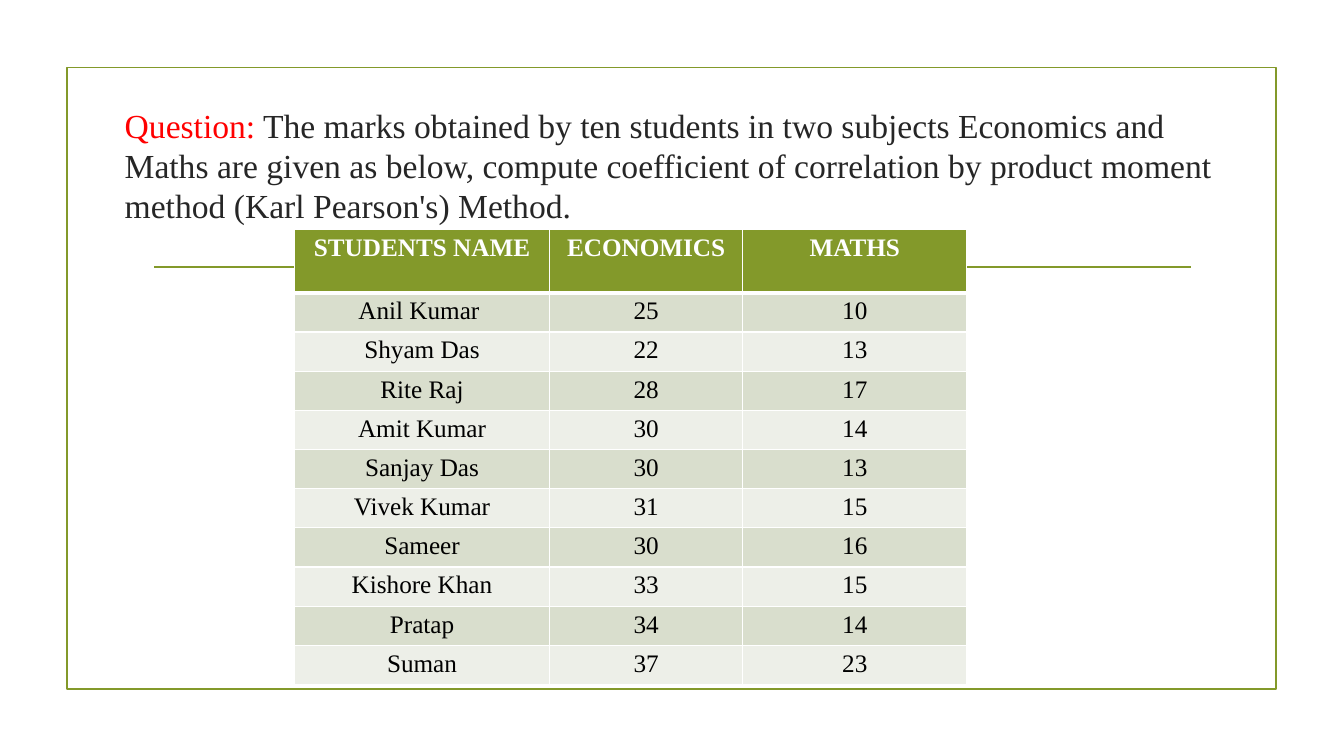
from pptx import Presentation
from pptx.dml.color import RGBColor
from pptx.enum.shapes import MSO_CONNECTOR, MSO_SHAPE
from pptx.enum.text import MSO_ANCHOR, PP_ALIGN
from pptx.oxml import parse_xml
from pptx.oxml.ns import nsdecls
from pptx.util import Pt

OLIVE = RGBColor(0x83, 0x99, 0x2A)
RED = RGBColor(0xFF, 0x00, 0x00)
INK = RGBColor(0x26, 0x26, 0x26)
BLACK = RGBColor(0x00, 0x00, 0x00)
WHITE = RGBColor(0xFF, 0xFF, 0xFF)
BANDS = [RGBColor(0xED, 0xEF, 0xE8), RGBColor(0xD9, 0xDE, 0xCD)]
FONT = "Times New Roman"

MARKS = [
    ("STUDENTS NAME", "ECONOMICS", "MATHS"),
    ("Anil Kumar ", 25, 10),
    ("Shyam Das", 22, 13),
    ("Rite Raj", 28, 17),
    ("Amit Kumar", 30, 14),
    ("Sanjay Das", 30, 13),
    ("Vivek Kumar", 31, 15),
    ("Sameer", 30, 16),
    ("Kishore Khan", 33, 15),
    ("Pratap", 34, 14),
    ("Suman", 37, 23),
]
COLUMN_WIDTHS = [182.2, 138, 160]
HEADER_HEIGHT, ROW_HEIGHT = 45.3, 27.14


def set_borders(cell, bottom_width):
    """Draw white borders round a cell, 1 pt except at the bottom."""
    props = cell._tc.get_or_add_tcPr()
    widths = {"lnL": 1, "lnR": 1, "lnT": 1, "lnB": bottom_width}
    for index, (side, width) in enumerate(widths.items()):
        props.insert(index, parse_xml(
            f'<a:{side} {nsdecls("a")} w="{Pt(width)}"><a:solidFill>'
            f'<a:srgbClr val="{WHITE}"/></a:solidFill></a:{side}>'))


prs = Presentation()
prs.slide_width, prs.slide_height = Pt(960), Pt(540)
slide = prs.slides.add_slide(prs.slide_layouts[6])

# Frame and divider
frame = slide.shapes.add_shape(
    MSO_SHAPE.RECTANGLE, Pt(47.7), Pt(48.2), Pt(864), Pt(444))
frame.shadow.inherit = False
frame.fill.background()
divider = slide.shapes.add_connector(
    MSO_CONNECTOR.STRAIGHT, Pt(110.2), Pt(190.8), Pt(850.5), Pt(190.8))
divider._element.spPr.append(parse_xml(f'<a:effectLst {nsdecls("a")}/>'))
for outline in (frame.line, divider.line):
    outline.color.rgb = OLIVE
    outline.width = Pt(1.25)

# Question
question = slide.shapes.add_textbox(Pt(82), Pt(64.8), Pt(808), Pt(106)).text_frame
question.word_wrap = True
question.vertical_anchor = MSO_ANCHOR.MIDDLE
wording = question.paragraphs[0]
wording.line_spacing = Pt(28.6)
wording.font.name, wording.font.size = FONT, Pt(24)
for text, color in (
    ("Question:", RED),
    (" The marks obtained by ten students in two subjects Economics and Maths "
     "are given as below, compute coefficient of correlation by product moment "
     "method (Karl Pearson's) Method.", INK),
):
    run = wording.add_run()
    run.text = text
    run.font.color.rgb = color

# Table of marks
marks = slide.shapes.add_table(
    len(MARKS), len(COLUMN_WIDTHS), Pt(210.4), Pt(163.8),
    Pt(sum(COLUMN_WIDTHS)), Pt(HEADER_HEIGHT + 10 * ROW_HEIGHT)).table
for column, width in zip(marks.columns, COLUMN_WIDTHS):
    column.width = Pt(width)
for r, values in enumerate(MARKS):
    is_header = r == 0
    marks.rows[r].height = Pt(HEADER_HEIGHT if is_header else ROW_HEIGHT)
    for c, value in enumerate(values):
        cell = marks.cell(r, c)
        cell.margin_top = cell.margin_bottom = Pt(3.2)
        cell.fill.solid()
        cell.fill.fore_color.rgb = OLIVE if is_header else BANDS[r % 2]
        set_borders(cell, 3 if is_header else 1)
        cell.text = str(value)
        entry = cell.text_frame.paragraphs[0]
        entry.alignment = PP_ALIGN.CENTER
        entry.font.name, entry.font.size = FONT, Pt(18)
        entry.font.bold = is_header
        entry.font.color.rgb = WHITE if is_header else BLACK

prs.save("out.pptx")
